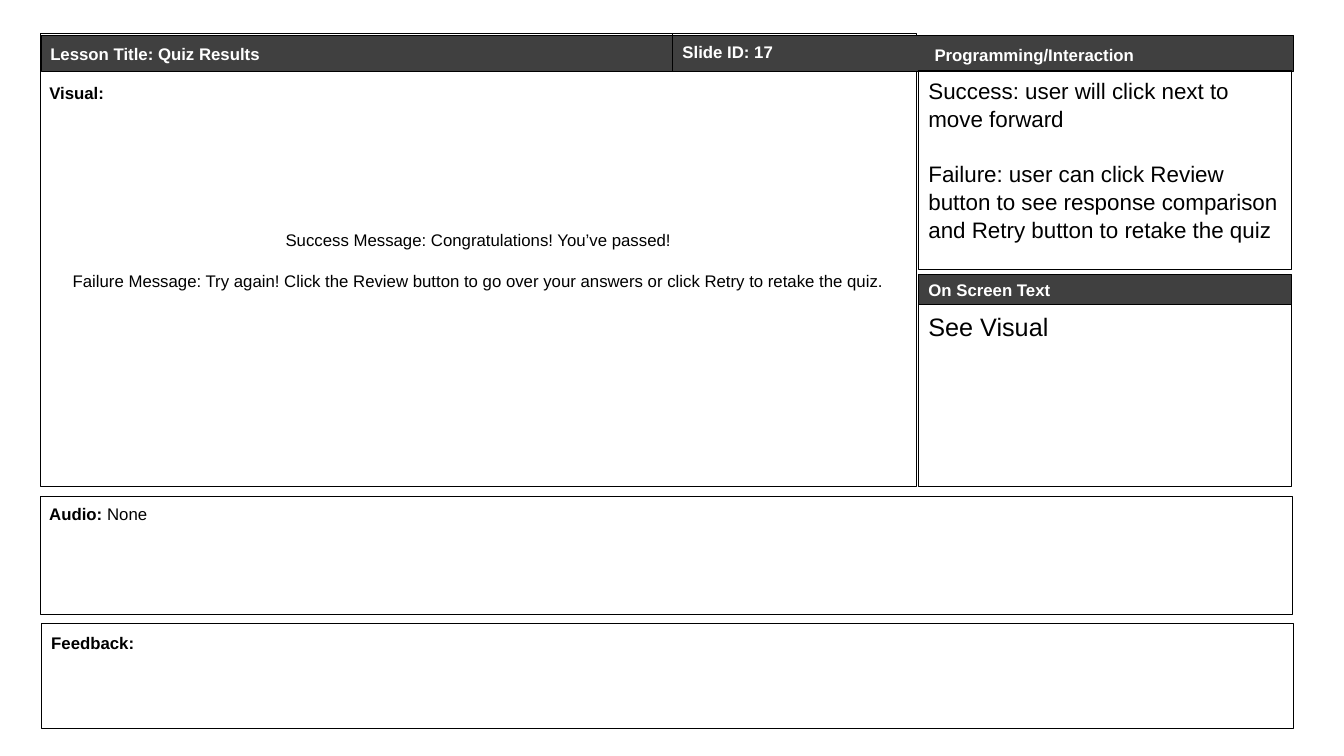
from pptx import Presentation
from pptx.dml.color import RGBColor as Rgb
from pptx.enum.shapes import MSO_CONNECTOR as Connector, MSO_SHAPE as Shape
from pptx.enum.text import MSO_ANCHOR as Anchor, PP_ALIGN as Align
from pptx.oxml.ns import qn
from pptx.util import Pt
from lxml.etree import SubElement

PX = 9144
COLORS = {"ink": "000000", "paper": "FFFFFF", "band": "404040"}


def color(name):
    """Look up a named colour."""
    return Rgb.from_string(COLORS[name])


def write(frame, paragraphs, size=12, ink="ink", bold=False,
          align=Align.LEFT, anchor=Anchor.TOP, gap=0):
    """Fill a text frame with paragraphs, each a list of strings or (text, bold) runs."""
    frame.word_wrap = True
    frame.vertical_anchor = anchor
    for index, runs in enumerate(paragraphs):
        paragraph = frame.add_paragraph() if index else frame.paragraphs[0]
        paragraph.alignment = align
        paragraph.line_spacing = 1.05
        paragraph.space_before = Pt(gap if index else 0)
        for part in runs:
            words, weight = part if isinstance(part, tuple) else (part, bold)
            run = paragraph.add_run()
            run.text = words
            run.font.name = "Arial"
            run.font.size = Pt(size)
            run.font.bold = weight
            run.font.color.rgb = color(ink)


class Storyboard:
    """Draws storyboard parts on one slide, in px of a hundredth of an inch."""

    def __init__(self, slide, line="ink", weight=0.75):
        self.shapes = slide.shapes
        self.line = line
        self.weight = weight

    def outline(self, line):
        """Apply the shared line style."""
        line.color.rgb = color(self.line)
        line.width = Pt(self.weight)

    def panel(self, box, fill=None, paragraphs=(), **style):
        """Add an outlined rectangle with optional fill and text."""
        panel = self.shapes.add_shape(Shape.RECTANGLE, *(v * PX for v in box))
        panel.shadow.inherit = False
        if fill:
            panel.fill.solid()
            panel.fill.fore_color.rgb = color(fill)
        else:
            panel.fill.background()
        self.outline(panel.line)
        write(panel.text_frame, paragraphs, **style)

    def label(self, box, *runs, **style):
        """Add a one-paragraph text box."""
        label = self.shapes.add_textbox(*(v * PX for v in box))
        write(label.text_frame, [runs], **{"bold": True, **style})

    def divider(self, *ends):
        """Add a straight line between two points."""
        divider = self.shapes.add_connector(Connector.STRAIGHT, *(v * PX for v in ends))
        self.outline(divider.line)
        SubElement(divider.element.spPr, qn("a:effectLst"))


def main():
    """Build and save the quiz results storyboard."""
    deck = Presentation()
    deck.slide_width, deck.slide_height = 1333 * PX, 750 * PX
    board = Storyboard(deck.slides.add_slide(deck.slide_layouts[6]))

    board.panel((911, 302, 370, 181), paragraphs=[["See Visual"]], size=18)
    board.panel((40, 33, 869, 450), "paper", [
        ["Success Message: Congratulations! You’ve passed!"],
        ["Failure Message: Try again! Click the Review button to go over "
         "your answers or click Retry to retake the quiz."],
    ], align=Align.CENTER, anchor=Anchor.MIDDLE, gap=14.5)
    board.panel((911, 272, 370, 30), "band", [["On Screen Text"]],
                ink="paper", bold=True, anchor=Anchor.MIDDLE)
    board.panel((41, 619, 1242, 104), "paper")
    board.label((41, 622, 1240, 100), "Feedback:")
    board.panel((41, 35, 1242, 36), "band")
    board.divider(667, 70, 667, 33)
    board.label((39, 76, 119, 30), "Visual:")
    board.panel((40, 493, 1242, 117), "paper")
    board.label((39, 494, 1236, 115), "Audio: ", ("None", False))
    board.panel((911, 70, 370, 197), paragraphs=[
        ["Success: user will click next to move forward"],
        ["Failure: user can click Review button to see response comparison "
         "and Retry button to retake the quiz"],
    ], size=16, gap=19.3)
    board.label((40, 37, 619, 30), "Lesson Title: Quiz Results", ink="paper")
    board.label((667, 36, 239, 30), "Slide ID: 17", ink="paper")
    board.label((917, 41, 225, 25), "Programming/Interaction",
                ink="paper", anchor=Anchor.MIDDLE)

    deck.save("out.pptx")


if __name__ == "__main__":
    main()
